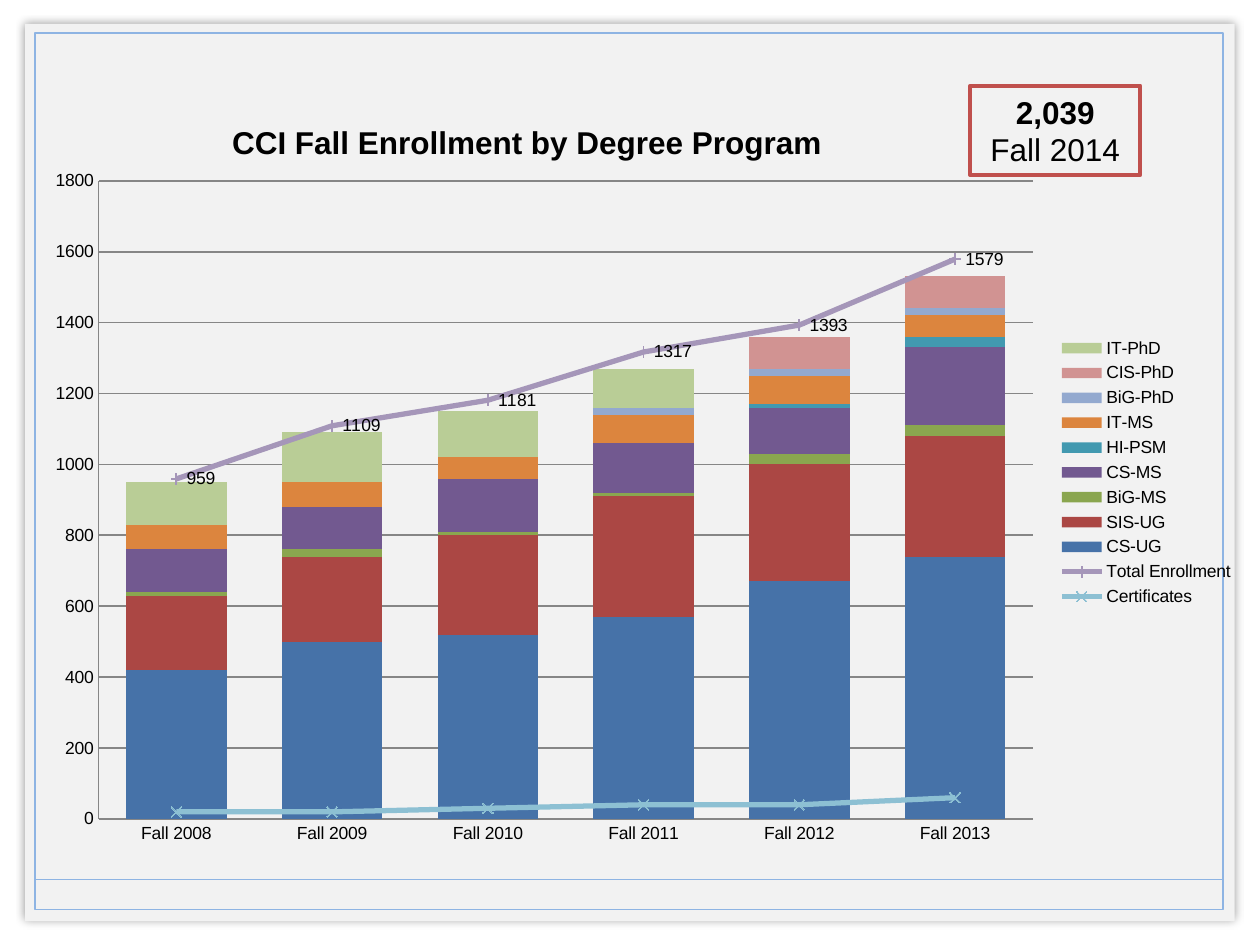
from lxml import etree
from pptx import Presentation
from pptx.chart.data import CategoryChartData
from pptx.dml.color import RGBColor
from pptx.enum.chart import (XL_CHART_TYPE, XL_LABEL_POSITION, XL_LEGEND_POSITION,
                             XL_MARKER_STYLE, XL_TICK_MARK)
from pptx.enum.shapes import MSO_CONNECTOR, MSO_SHAPE
from pptx.enum.text import MSO_ANCHOR, MSO_AUTO_SIZE, PP_ALIGN
from pptx.oxml import parse_xml
from pptx.oxml.ns import nsdecls, qn
from pptx.util import Inches, Pt

RECT, STRAIGHT = MSO_SHAPE.RECTANGLE, MSO_CONNECTOR.STRAIGHT
STACKED, RIGHT = XL_CHART_TYPE.COLUMN_STACKED, XL_LEGEND_POSITION.RIGHT
NO_TICK, LABEL_RIGHT = XL_TICK_MARK.NONE, XL_LABEL_POSITION.RIGHT
PLUS, CROSS = XL_MARKER_STYLE.PLUS, XL_MARKER_STYLE.X
CENTER, MIDDLE = PP_ALIGN.CENTER, MSO_ANCHOR.MIDDLE
FIT_SHAPE = MSO_AUTO_SIZE.SHAPE_TO_FIT_TEXT

FONT = "Arial"
U = Inches(0.01)  # grid of 1000 columns by 750 rows
HEX = {"panel": "F2F2F2", "frame": "8EB4E3", "accent": "C0504D",
       "text": "000000", "grid": "868686"}
COLORS = {k: RGBColor.from_string(v) for k, v in HEX.items()}


def write(p, text, size=18, bold=False, color="text"):
    p.alignment = CENTER
    r = p.add_run()
    r.text = text
    r.font.name, r.font.size, r.font.bold = FONT, Pt(size), bold
    r.font.color.rgb = COLORS[color]


def set_layout(part, index, inner=False, **shares):
    """Place a chart part by shares of the chart's size."""
    for old in part.findall(qn("c:layout")):
        part.remove(old)
    layout = etree.Element(qn("c:layout"))
    manual = etree.SubElement(layout, qn("c:manualLayout"))
    if inner:
        etree.SubElement(manual, qn("c:layoutTarget"), val="inner")
    for key in ("x", "y"):
        etree.SubElement(manual, qn(f"c:{key}Mode"), val="edge")
    for key, share in shares.items():
        etree.SubElement(manual, qn(f"c:{key}"), val=str(share))
    part.insert(index, layout)


prs = Presentation()
prs.slide_width, prs.slide_height = 1000 * U, 750 * U
s = prs.slides.add_slide(prs.slide_layouts[6])

# Panel with a soft shadow
sp = s.shapes.add_shape(RECT, 20 * U, 19 * U, 960 * U, 712 * U)
sp.fill.solid()
sp.fill.fore_color.rgb = COLORS["panel"]
sp.line.fill.background()
sp.shadow.inherit = False
sp._element.spPr.find(qn("a:effectLst")).append(parse_xml(
    f'<a:outerShdw {nsdecls("a")} blurRad="{Pt(5)}" dist="0" dir="0" rotWithShape="0">'
    '<a:srgbClr val="000000"><a:alpha val="40000"/></a:srgbClr></a:outerShdw>'))

# Frame and footer rule
sp = s.shapes.add_shape(RECT, 28 * U, 26 * U, 943 * U, 696 * U)
sp.fill.background()
sp.shadow.inherit = False
rule = s.shapes.add_connector(STRAIGHT, 28 * U, 698 * U, 971 * U, 698 * U)
for shape in (sp, rule):
    shape.line.color.rgb = COLORS["frame"]
    shape.line.width = Pt(1)
etree.SubElement(rule._element.spPr, qn("a:effectLst"))

# Enrollment data: name, colour, values
columns = [
    ("CS-UG", "4672A8", (420, 500, 520, 570, 670, 740)),
    ("SIS-UG", "AB4744", (210, 240, 280, 340, 330, 340)),
    ("BiG-MS", "8AA64F", (10, 20, 10, 10, 30, 30)),
    ("CS-MS", "725990", (120, 120, 150, 140, 130, 220)),
    ("HI-PSM", "4299B0", (None, None, None, None, 10, 30)),
    ("IT-MS", "DC853E", (70, 70, 60, 80, 80, 60)),
    ("BiG-PhD", "93A9CF", (None, None, None, 20, 20, 20)),
    ("CIS-PhD", "D19392", (None, None, None, None, 90, 90)),
    ("IT-PhD", "B9CD96", (120, 140, 130, 110, None, None)),
]
lines = [
    ("Total Enrollment", "A596B9", (959, 1109, 1181, 1317, 1393, 1579)),
    ("Certificates", "8DC0D3", (20, 20, 30, 40, 40, 60)),
]
data = CategoryChartData()
data.categories = [f"Fall {year}" for year in range(2008, 2014)]
for name, _, values in columns + lines:
    data.add_series(name, values)
chart = s.shapes.add_chart(STACKED, 25 * U, 68 * U, 967 * U, 614 * U, data).chart
chart.font.name, chart.font.size = FONT, Pt(10)
chart.font.color.rgb = COLORS["text"]

# Stacked columns
bars = chart.plots[0]
bars.gap_width, bars.overlap, bars.vary_by_categories = 55, 100, False
for series, (_, color, _) in zip(bars.series, columns):
    series.format.fill.solid()
    series.format.fill.fore_color.rgb = RGBColor.from_string(color)

# Move the last two series to a line plot on the same axes
bar_xml = bars._element
line_xml = parse_xml(f'<c:lineChart {nsdecls("c")}><c:grouping val="standard"/>'
                     '<c:varyColors val="0"/></c:lineChart>')
for ser in bar_xml.findall(qn("c:ser"))[len(columns):]:
    for flag in ser.findall(qn("c:invertIfNegative")):
        ser.remove(flag)
    line_xml.append(ser)
etree.SubElement(line_xml, qn("c:marker"), val="1")
for axis_id in bar_xml.findall(qn("c:axId")):
    etree.SubElement(line_xml, qn("c:axId"), val=axis_id.get("val"))
bar_xml.addnext(line_xml)

line_series = list(chart.plots[1].series)
for series, (_, color, _), style in zip(line_series, lines, (PLUS, CROSS)):
    rgb = RGBColor.from_string(color)
    series.smooth = False
    series.format.line.color.rgb = rgb
    series.format.line.width = Pt(3)
    series.marker.style, series.marker.size = style, 6
    series.marker.format.fill.background()
    series.marker.format.line.color.rgb = rgb
labels = line_series[0].data_labels
labels.show_value, labels.position = True, LABEL_RIGHT
labels.number_format, labels.number_format_is_linked = "0", False

# Axes
value_axis = chart.value_axis
value_axis.minimum_scale, value_axis.maximum_scale = 0, 1800
value_axis.major_unit = 200
value_axis.has_major_gridlines = True
for axis in (chart.category_axis, value_axis):
    axis.major_tick_mark = axis.minor_tick_mark = NO_TICK
for part in (chart.category_axis, value_axis, value_axis.major_gridlines):
    part.format.line.color.rgb = COLORS["grid"]
    part.format.line.width = Pt(1)

# Title, legend and plot area
chart.has_title = True
title = chart.chart_title
write(title.text_frame.paragraphs[0], "CCI Fall Enrollment by Degree Program", bold=True)
chart.has_legend = True
chart.legend.position, chart.legend.include_in_layout = RIGHT, False
set_layout(title._element, 1, x=0.16, y=0.04)
set_layout(chart.legend._element, 1, x=0.84, y=0.32, w=0.15, h=0.36)
set_layout(bar_xml.getparent(), 0, inner=True, x=0.055, y=0.123, w=0.767, h=0.825)

# Latest enrollment callout
sp = s.shapes.add_shape(RECT, 770 * U, 68 * U, 135 * U, 71 * U)
sp.fill.background()
sp.line.color.rgb = COLORS["accent"]
sp.line.width = Pt(2.25)
sp.shadow.inherit = False
tf = sp.text_frame
tf.word_wrap, tf.auto_size, tf.vertical_anchor = True, FIT_SHAPE, MIDDLE
write(tf.paragraphs[0], "2,039", bold=True)
write(tf.add_paragraph(), "Fall 2014")

prs.save("out.pptx")
